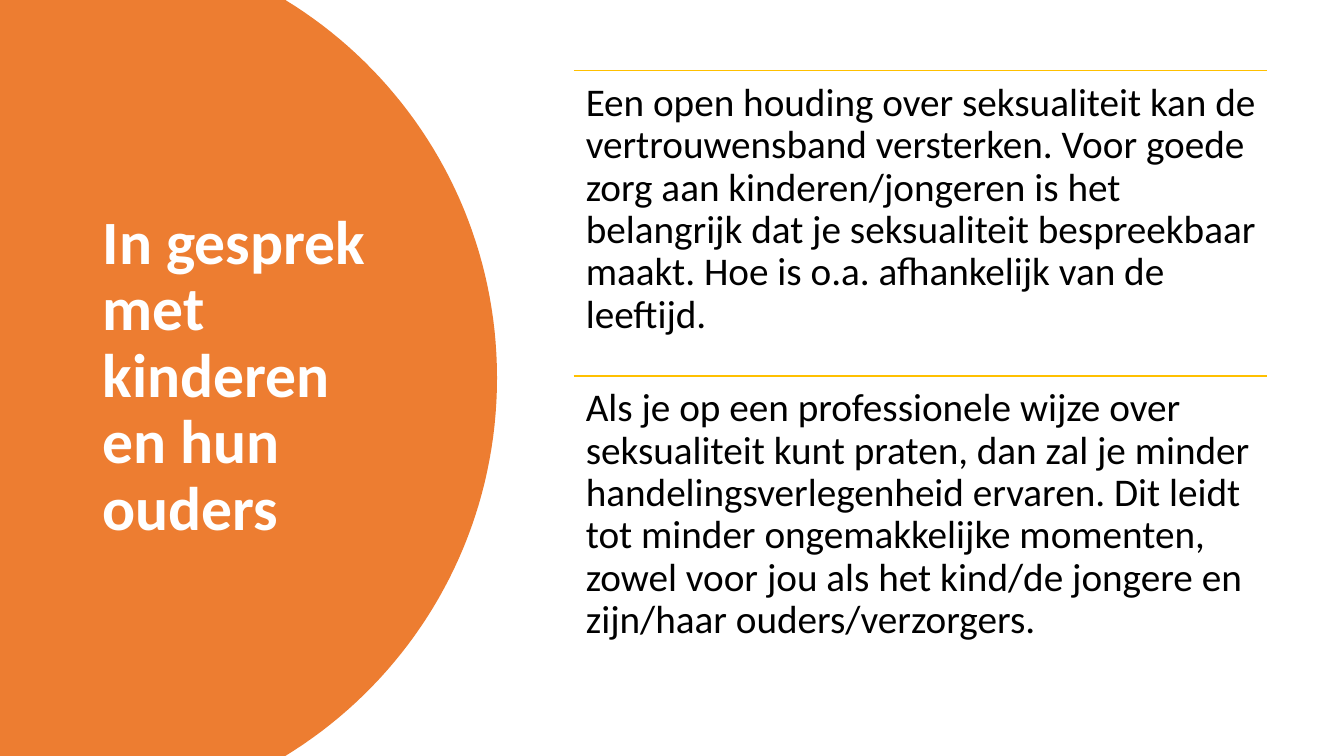
from lxml import etree
from pptx import Presentation
from pptx.dml.color import RGBColor
from pptx.enum.shapes import MSO_CONNECTOR as CONN
from pptx.enum.text import MSO_ANCHOR as ANCHOR
from pptx.oxml.ns import qn
from pptx.util import Inches, Pt

ORANGE = RGBColor(0xED, 0x7D, 0x31)
GOLD = RGBColor(0xFF, 0xC0, 0x00)
WHITE = RGBColor(0xFF, 0xFF, 0xFF)
BLACK = RGBColor(0x00, 0x00, 0x00)

prs = Presentation()
prs.slide_width, prs.slide_height = Inches(13.33), Inches(7.5)
s = prs.slides.add_slide(prs.slide_layouts[6])


def bezier(p0, p1, p2, p3, steps=40):
    """Points along a cubic curve, without its start."""
    points = []
    for i in range(1, steps + 1):
        t = i / steps
        u = 1 - t
        points.append(tuple(u**3 * a + 3 * u * u * t * b + 3 * u * t * t * c + t**3 * d
                            for a, b, c, d in zip(p0, p1, p2, p3)))
    return points


def add_text(text, box, insets, size, color, bold=False):
    """Text box with one wrapped paragraph; insets are left, right, vertical."""
    tf = s.shapes.add_textbox(*map(Inches, box)).text_frame
    tf.word_wrap = True
    tf.margin_left, tf.margin_right, tf.margin_top = map(Inches, insets)
    tf.margin_bottom = tf.margin_top
    tf.text = text
    p = tf.paragraphs[0]
    p.line_spacing = 0.9
    font = p.runs[0].font
    font.name, font.size, font.bold = "Calibri", Pt(size), bold
    font.color.rgb = color
    return tf


# Orange panel with a rounded right edge
upper = bezier((2.83, 0), (4.09, 0.77), (4.93, 2.16), (4.93, 3.75))
lower = bezier((4.93, 3.75), (4.93, 5.34), (4.09, 6.73), (2.83, 7.5))
outline = [(2.83, 0)] + upper + lower + [(0, 7.5)]
builder = s.shapes.build_freeform(0, 0)
builder.add_line_segments([(Inches(x), Inches(y)) for x, y in outline], close=True)
panel = builder.convert_to_shape()
panel.shadow.inherit = False
panel.fill.solid()
panel.fill.fore_color.rgb = ORANGE
panel.line.fill.background()

# Title
title = add_text("In gesprek met kinderen en hun ouders",
                 (0.92, 0.7, 3.15, 6.09), (0.1, 0.1, 0.05), 44, WHITE, bold=True)
title.vertical_anchor = ANCHOR.MIDDLE

# Two statements, each under a gold rule
statements = [
    "Een open houding over seksualiteit kan de vertrouwensband versterken. "
    "Voor goede zorg aan kinderen/jongeren is het belangrijk dat je seksualiteit "
    "bespreekbaar maakt. Hoe is o.a. afhankelijk van de leeftijd.",
    "Als je op een professionele wijze over seksualiteit kunt praten, dan zal je "
    "minder handelingsverlegenheid ervaren. Dit leidt tot minder ongemakkelijke "
    "momenten, zowel voor jou als het kind/de jongere en zijn/haar ouders/verzorgers.",
]
LEFT, TOP, WIDTH, HEIGHT = 5.69, 0.7, 6.88, 3.03
for i, statement in enumerate(statements):
    y = TOP + i * HEIGHT
    rule = s.shapes.add_connector(CONN.STRAIGHT, Inches(LEFT), Inches(y),
                                  Inches(LEFT + WIDTH), Inches(y))
    rule.line.color.rgb = GOLD
    rule.line.width = Pt(1)
    etree.SubElement(rule._element.spPr, qn("a:effectLst"))
    add_text(statement, (LEFT, y, WIDTH, HEIGHT), (0.12, 0.09, 0.12), 28, BLACK)

prs.save("out.pptx")
